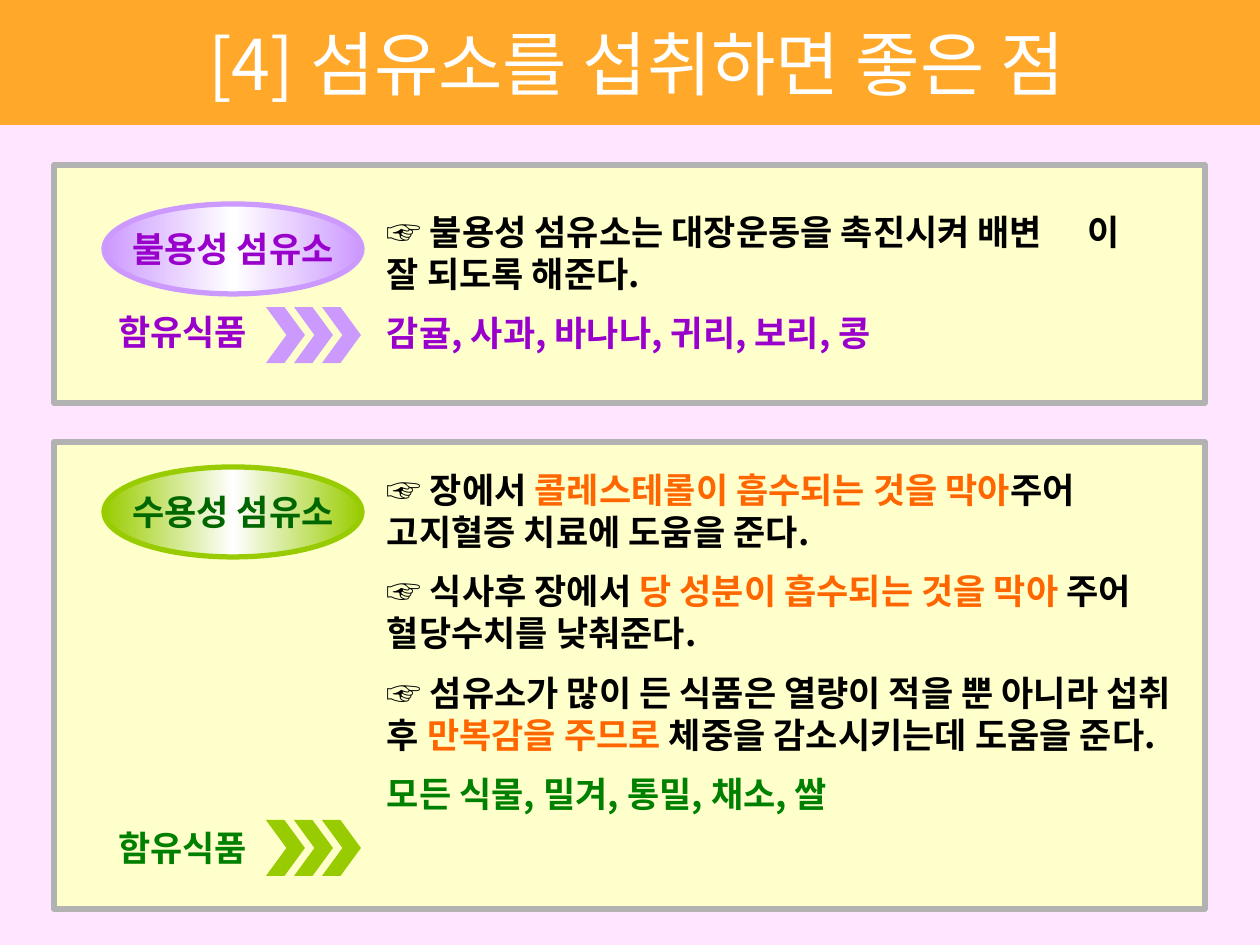
from copy import deepcopy
from lxml import etree
from pptx import Presentation, util as u
from pptx.dml.color import RGBColor
from pptx.enum import shapes, text
from pptx.oxml.ns import qn

PX = 914400 // 126
FONT = "Noto Sans CJK KR"
COLORS = {
    "background": "FFE5FF", "banner": "FFA829", "white": "FFFFFF",
    "panel": "FFFFCC", "border": "B2B2B2", "black": "000000",
    "orange": "FF6600", "lilac": "CC99FF", "purple": "9900CC",
    "lime": "99CC00", "green": "008000", "dark green": "006600",
}
TITLE = "[4] 섬유소를 섭취하면 좋은 점"
FOOD_LABEL = "함유식품"
TAB_STOP = 701

# Each paragraph is a list of (text, color) runs; boxes are left, top, width, height in px.
SECTIONS = [
    {
        "name": "불용성 섬유소", "name color": "purple",
        "accent": "lilac", "food color": "purple",
        "panel": (54, 165, 1151, 238), "oval top": 204,
        "body": (323, 204, 843, 160), "food top": 304, "arrow top": 307,
        "paragraphs": [
            [("☞ 불용성 섬유소는 대장운동을 촉진시켜 배변\t이 잘 되도록 해준다.", "black")],
            [("감귤, 사과, 바나나, 귀리, 보리, 콩", "purple")],
        ],
    },
    {
        "name": "수용성 섬유소", "name color": "dark green",
        "accent": "lime", "food color": "green",
        "panel": (54, 442, 1151, 467), "oval top": 467,
        "body": (323, 462, 863, 412), "food top": 820, "arrow top": 820,
        "paragraphs": [
            [("☞ 장에서 ", "black"), ("콜레스테롤이 흡수되는 것을 막아", "orange"),
             ("주어 고지혈증 치료에 도움을 준다.", "black")],
            [("☞ 식사후 장에서 ", "black"), ("당 성분이 흡수되는 것을 막아 ", "orange"),
             ("주어 혈당수치를 낮춰준다.", "black")],
            [("☞ 섬유소가 많이 든 식품은 열량이 적을 뿐 아니라 섭취 후 ", "black"),
             ("만복감을 주므로 ", "orange"), ("체중을 감소시키는데 도움을 준다.", "black")],
            [("모든 식물, 밀겨, 통밀, 채소, 쌀", "green")],
        ],
    },
]


def rgb(name):
    return RGBColor.from_string(COLORS[name])


def emu(*lengths):
    return [length * PX for length in lengths]


def write(shape, paragraphs, size=20, bold=True, align=text.PP_ALIGN.LEFT,
          anchor=text.MSO_ANCHOR.TOP, wrap=True, insets=(64, 6, 13, 6)):
    frame = shape.text_frame
    frame.word_wrap = wrap
    frame.auto_size = text.MSO_AUTO_SIZE.NONE
    frame.vertical_anchor = anchor
    (frame.margin_left, frame.margin_top,
     frame.margin_right, frame.margin_bottom) = emu(*insets)
    for index, runs in enumerate(paragraphs):
        paragraph = frame.add_paragraph() if index else frame.paragraphs[0]
        paragraph.alignment = align
        paragraph.space_before = u.Pt(10 if index else 0)
        if any("\t" in words for words, _ in runs):
            tabs = etree.SubElement(paragraph._p.get_or_add_pPr(), qn("a:tabLst"))
            etree.SubElement(tabs, qn("a:tab"), pos=str(TAB_STOP * PX), algn="l")
        for words, color in runs:
            run = paragraph.add_run()
            run.text = words
            run.font.size = u.Pt(size)
            run.font.bold = bold
            run.font.name = FONT
            run.font.color.rgb = rgb(color)
            latin = run._r.rPr.find(qn("a:latin"))
            latin.addnext(latin.makeelement(qn("a:ea"), {"typeface": FONT}))


def add_shape(group, kind, box, fill, line=None):
    shape = group.shapes.add_shape(kind, *emu(*box))
    shape.shadow.inherit = False
    shape.fill.solid()
    shape.fill.fore_color.rgb = rgb(fill)
    if line:
        shape.line.color.rgb = rgb(line)
        shape.line.width = u.Pt(3)
    else:
        shape.line.fill.background()
    return shape


def fade_through_white(shape, edge):
    shape.fill.gradient()
    shape.fill.gradient_angle = 0
    stops = shape._element.spPr.find(qn("a:gradFill")).find(qn("a:gsLst"))
    stops.insert(1, deepcopy(stops[0]))
    for stop, position, color in zip(shape.fill.gradient_stops, (0, 0.5, 1),
                                     (edge, "white", edge)):
        stop.position = position
        stop.color.rgb = rgb(color)


def add_section(slide, section):
    kinds = shapes.MSO_SHAPE
    group = slide.shapes.add_group_shape()
    add_shape(group, kinds.RECTANGLE, section["panel"], "panel", "border")

    body = group.shapes.add_textbox(*emu(*section["body"]))
    write(body, section["paragraphs"])

    oval = add_shape(group, kinds.OVAL, (104, section["oval top"], 258, 90),
                     section["accent"], section["accent"])
    fade_through_white(oval, section["accent"])
    write(oval, [[(section["name"], section["name color"])]], wrap=False,
          align=text.PP_ALIGN.CENTER, anchor=text.MSO_ANCHOR.MIDDLE,
          insets=(0, 6, 0, 6))

    for index in range(3):
        box = (266 + 28 * index, section["arrow top"], 39, 56)
        chevron = add_shape(group, kinds.CHEVRON, box, section["accent"])
        chevron.adjustments[0] = 0.525

    label = group.shapes.add_textbox(*emu(54, section["food top"], 287, 54))
    write(label, [[(FOOD_LABEL, section["food color"])]])


def main():
    presentation = Presentation()
    presentation.slide_width, presentation.slide_height = emu(1260, 945)
    slide = presentation.slides.add_slide(presentation.slide_layouts[5])
    slide.background.fill.solid()
    slide.background.fill.fore_color.rgb = rgb("background")

    title = slide.shapes.title
    title.left, title.top, title.width, title.height = emu(0, 0, 1260, 125)
    title.fill.solid()
    title.fill.fore_color.rgb = rgb("banner")
    write(title, [[(TITLE, "white")]], size=40, bold=False, wrap=False,
          align=text.PP_ALIGN.CENTER, anchor=text.MSO_ANCHOR.MIDDLE,
          insets=(26, 6, 13, 6))

    for section in SECTIONS:
        add_section(slide, section)
    presentation.save("out.pptx")


if __name__ == "__main__":
    main()
